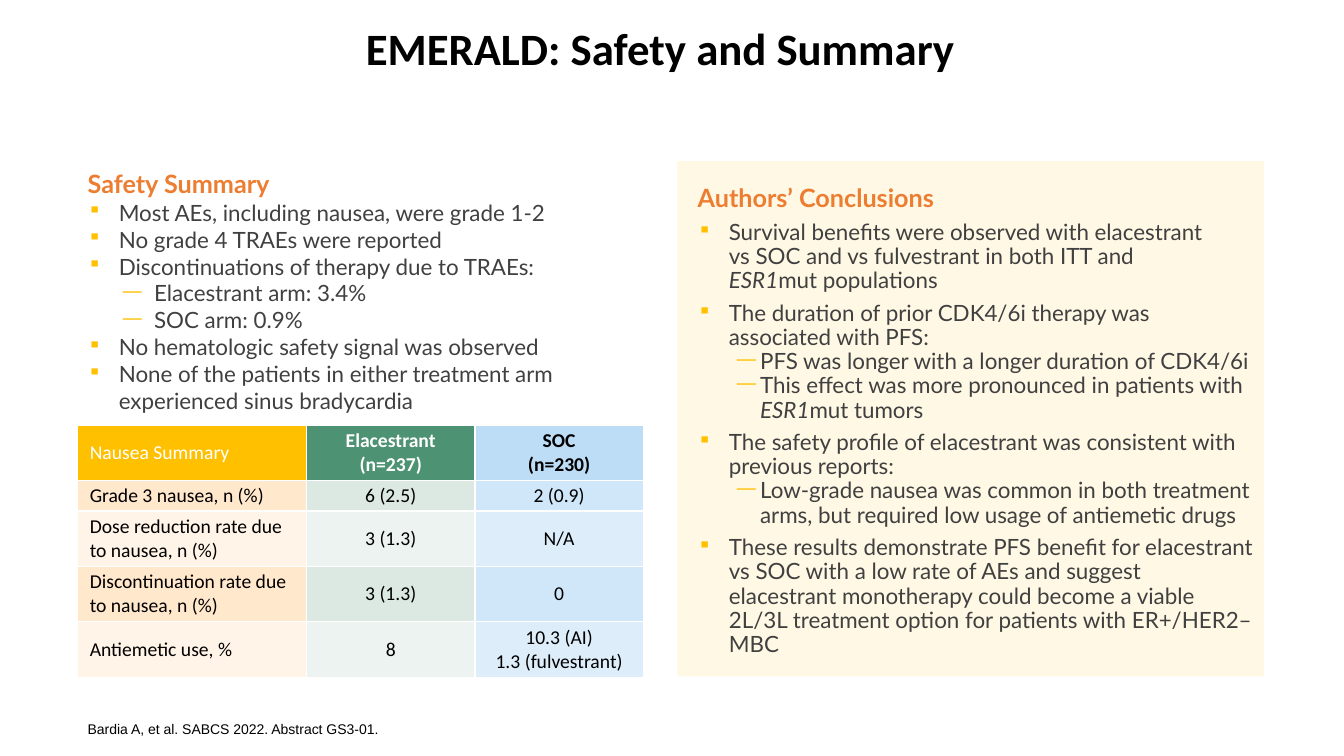
from dataclasses import dataclass

from lxml.etree import SubElement as Sub
from pptx import Presentation
from pptx.dml.color import RGBColor as RGB
from pptx.dml.fill import FillFormat as Fill
from pptx.enum.shapes import MSO_SHAPE as Kind
from pptx.enum.text import MSO_ANCHOR as Anchor, PP_ALIGN as Align
from pptx.oxml.ns import qn
from pptx.text.text import TextFrame as Frame
from pptx.util import Inches, Pt

GOLD, GREEN, BLUE = "FFC000", "4D9272", "BDDDF7"
ORANGE, GRAY, BLACK, WHITE = "ED7D31", "404040", "000000", "FFFFFF"


@dataclass(frozen=True)
class Box:
    """Left, top, width and height in percent of the slide."""
    left: float
    top: float
    width: float
    height: float


@dataclass(frozen=True)
class Style:
    font: str
    size: int
    color: str = BLACK
    bold: bool = False


@dataclass(frozen=True)
class Para:
    """Words with *italic* parts; level 0 is plain, 1 a bullet, 2 a dash."""
    words: str
    level: int = 0


@dataclass(frozen=True)
class Look:
    """Spacing of a list: line pitch, gap before bullets, dash indent and hang."""
    pitch: float
    gap: int
    dash: float
    hang: float


@dataclass(frozen=True)
class Tint:
    color: str
    alpha: int = 100


HEAD = Style("Lato", 18, ORANGE, True)
ITEM = Style("Lato", 16, GRAY)

SAFETY = [
    Para("Safety Summary"),
    Para("Most AEs, including nausea, were grade 1-2", 1),
    Para("No grade 4 TRAEs were reported", 1),
    Para("Discontinuations of therapy due to TRAEs:", 1),
    Para("Elacestrant arm: 3.4%", 2),
    Para("SOC arm: 0.9%", 2),
    Para("No hematologic safety signal was observed", 1),
    Para("None of the patients in either treatment arm experienced sinus bradycardia", 1),
]
CLOSING = [
    Para("Authors’ Conclusions"),
    Para("Survival benefits were observed with elacestrant \n"
         "vs SOC and vs fulvestrant in both ITT and \n*ESR1*mut populations", 1),
    Para("The duration of prior CDK4/6i therapy was associated with PFS:", 1),
    Para("PFS was longer with a longer duration of CDK4/6i", 2),
    Para("This effect was more pronounced in patients with *ESR1*mut tumors", 2),
    Para("The safety profile of elacestrant was consistent with previous reports:", 1),
    Para("Low-grade nausea was common in both treatment arms, "
         "but required low usage of antiemetic drugs", 2),
    Para("These results demonstrate PFS benefit for elacestrant vs SOC with a low rate "
         "of AEs and suggest elacestrant monotherapy could become a viable 2L/3L "
         "treatment option for patients with ER+/HER2– MBC", 1),
]
NAUSEA = [
    ("Nausea Summary", "Elacestrant\n(n=237)", "SOC\n(n=230)"),
    ("Grade 3 nausea, n (%)", "6 (2.5)", "2 (0.9)"),
    ("Dose reduction rate due to nausea, n (%)", "3 (1.3)", "N/A"),
    ("Discontinuation rate due to nausea, n (%)", "3 (1.3)", "0"),
    ("Antiemetic use, %", "8", "10.3 (AI)\n1.3 (fulvestrant)"),
]
COLS = (17.03, 12.53, 12.53)
ROWS = (7.33, 4, 7.33, 7.33, 7.33)
TOP = (Tint(GOLD), Tint(GREEN), Tint(BLUE))
BANDS = (
    (Tint("FFE8CC"), Tint(GREEN, 20), Tint(BLUE, 70)),
    (Tint("FFF4E7"), Tint(GREEN, 10), Tint(BLUE, 50)),
)

deck = Presentation()
deck.slide_width, deck.slide_height = Inches(13.33), Inches(7.5)
slide = deck.slides.add_slide(deck.slide_layouts[6])


def wide(part: float) -> int:
    return round(deck.slide_width * part / 100)


def high(part: float) -> int:
    return round(deck.slide_height * part / 100)


def place(box: Box) -> tuple[int, int, int, int]:
    return wide(box.left), high(box.top), wide(box.width), high(box.height)


def paint(fill: Fill, tint: Tint) -> None:
    fill.solid()
    fill.fore_color.rgb = RGB.from_string(tint.color)
    if tint.alpha < 100:
        color = fill._xPr.find(qn("a:solidFill"))[0]
        Sub(color, qn("a:alpha"), val=str(tint.alpha * 1000))


def write(para, words: str, style: Style) -> None:
    """Add runs, with every second part between asterisks in italics."""
    for part, text in enumerate(words.split("*")):
        for row, line in enumerate(text.split("\n")):
            if row:
                para.add_line_break()
            if not line:
                continue
            run = para.add_run()
            run.text = line
            font = run.font
            font.name, font.size, font.bold = style.font, Pt(style.size), style.bold
            font.italic = part % 2 == 1
            font.color.rgb = RGB.from_string(style.color)


def mark(para, sign: str, left: float, hang: float) -> None:
    """Give a paragraph a hanging gold bullet."""
    props = para._p.get_or_add_pPr()
    props.set("marL", str(Inches(left)))
    props.set("indent", str(-Inches(hang)))
    Sub(Sub(props, qn("a:buClr")), qn("a:srgbClr"), val=GOLD)
    Sub(props, qn("a:buSzPct"), val="85000")
    Sub(props, qn("a:buChar"), char=sign)


def fill_list(frame: Frame, items: list[Para], look: Look) -> None:
    frame.word_wrap = True
    for i, item in enumerate(items):
        para = frame.add_paragraph() if i else frame.paragraphs[0]
        para.alignment = Align.LEFT
        para.line_spacing = look.pitch
        para.space_before = Pt(look.gap if item.level == 1 else 0)
        if item.level == 1:
            mark(para, "▪", 0.31, 0.31)
        elif item.level == 2:
            para.level = 1
            mark(para, "—", look.dash, look.hang)
        write(para, item.words, ITEM if item.level else HEAD)


def add_box(box: Box, anchor: Anchor) -> Frame:
    frame = slide.shapes.add_textbox(*place(box)).text_frame
    frame.word_wrap, frame.vertical_anchor = True, anchor
    return frame


def add_line(box: Box, words: str, style: Style, anchor: Anchor, align: Align) -> None:
    para = add_box(box, anchor).paragraphs[0]
    para.alignment, para.line_spacing = align, 0.9
    write(para, words, style)


def edge(cell) -> None:
    """Draw white borders around a cell."""
    props = cell._tc.get_or_add_tcPr()
    for side in ("lnL", "lnR", "lnT", "lnB"):
        line = Sub(props, qn(f"a:{side}"), w=str(Pt(1)))
        Sub(Sub(line, qn("a:solidFill")), qn("a:srgbClr"), val=WHITE)


def add_grid(box: Box) -> None:
    grid = slide.shapes.add_table(len(ROWS), len(COLS), *place(box)).table
    grid.first_row = grid.horz_banding = False
    for col, part in zip(grid.columns, COLS):
        col.width = wide(part)
    for row, part in zip(grid.rows, ROWS):
        row.height = high(part)
    for r, texts in enumerate(NAUSEA):
        tints = BANDS[(r - 1) % 2] if r else TOP
        for c, (text, tint) in enumerate(zip(texts, tints)):
            cell = grid.cell(r, c)
            edge(cell)
            paint(cell.fill, tint)
            cell.vertical_anchor = Anchor.MIDDLE
            cell.margin_left = Inches(0.05 if c else 0.12)
            cell.margin_right = Inches(0.05)
            cell.margin_top = cell.margin_bottom = Inches(0.03)
            color = WHITE if r == 0 and c < 2 else BLACK
            style = Style("Calibri", 14, color, r == 0 and c > 0)
            frame = cell.text_frame
            for i, line in enumerate(text.split("\n")):
                para = frame.add_paragraph() if i else frame.paragraphs[0]
                para.alignment = Align.CENTER if c else Align.LEFT
                write(para, line, style)


def add_panel(box: Box) -> None:
    panel = slide.shapes.add_shape(Kind.RECTANGLE, *place(box))
    panel.shadow.inherit = False
    panel.line.fill.background()
    paint(panel.fill, Tint(GOLD, 10))
    frame = panel.text_frame
    frame.vertical_anchor = Anchor.TOP
    frame.margin_left, frame.margin_top = Inches(0.2), Inches(0.24)
    fill_list(frame, CLOSING, Look(0.9, 6, 0.62, 0.23))


add_line(Box(4.88, 0, 88.52, 13.47), "EMERALD: Safety and Summary",
         Style("Calibri", 32, BLACK, True), Anchor.MIDDLE, Align.CENTER)
add_line(Box(5.78, 90, 51.76, 8.27), "Bardia A, et al. SABCS 2022. Abstract GS3-01.",
         Style("Arial", 10), Anchor.BOTTOM, Align.LEFT)
add_grid(Box(5.78, 56.27, sum(COLS), sum(ROWS)))
fill_list(add_box(Box(5.78, 21.33, 42.09, 34.4), Anchor.MIDDLE), SAFETY, Look(1.0, 0, 0.66, 0.31))
add_panel(Box(50.41, 21.33, 43.66, 68.13))
deck.save("out.pptx")
